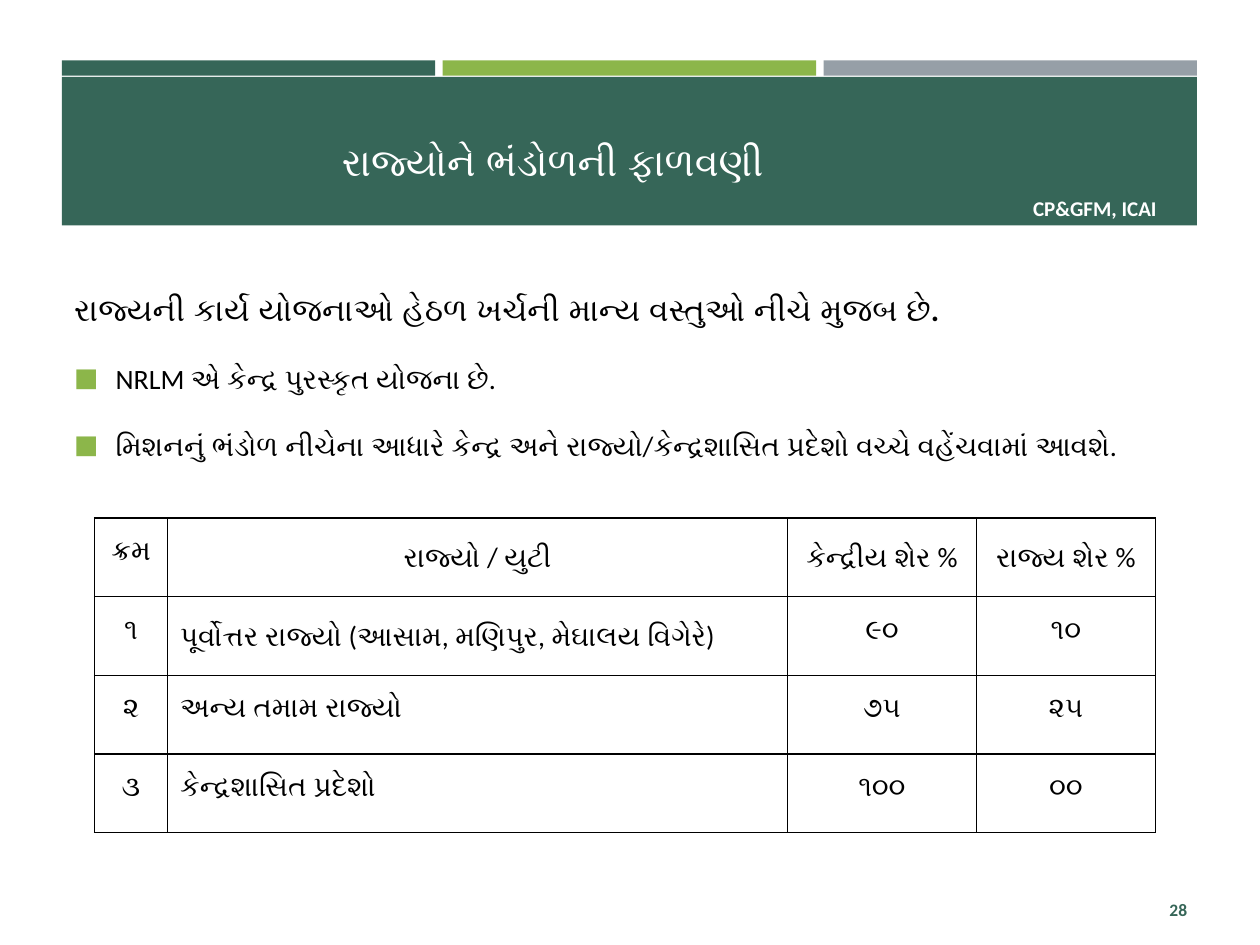
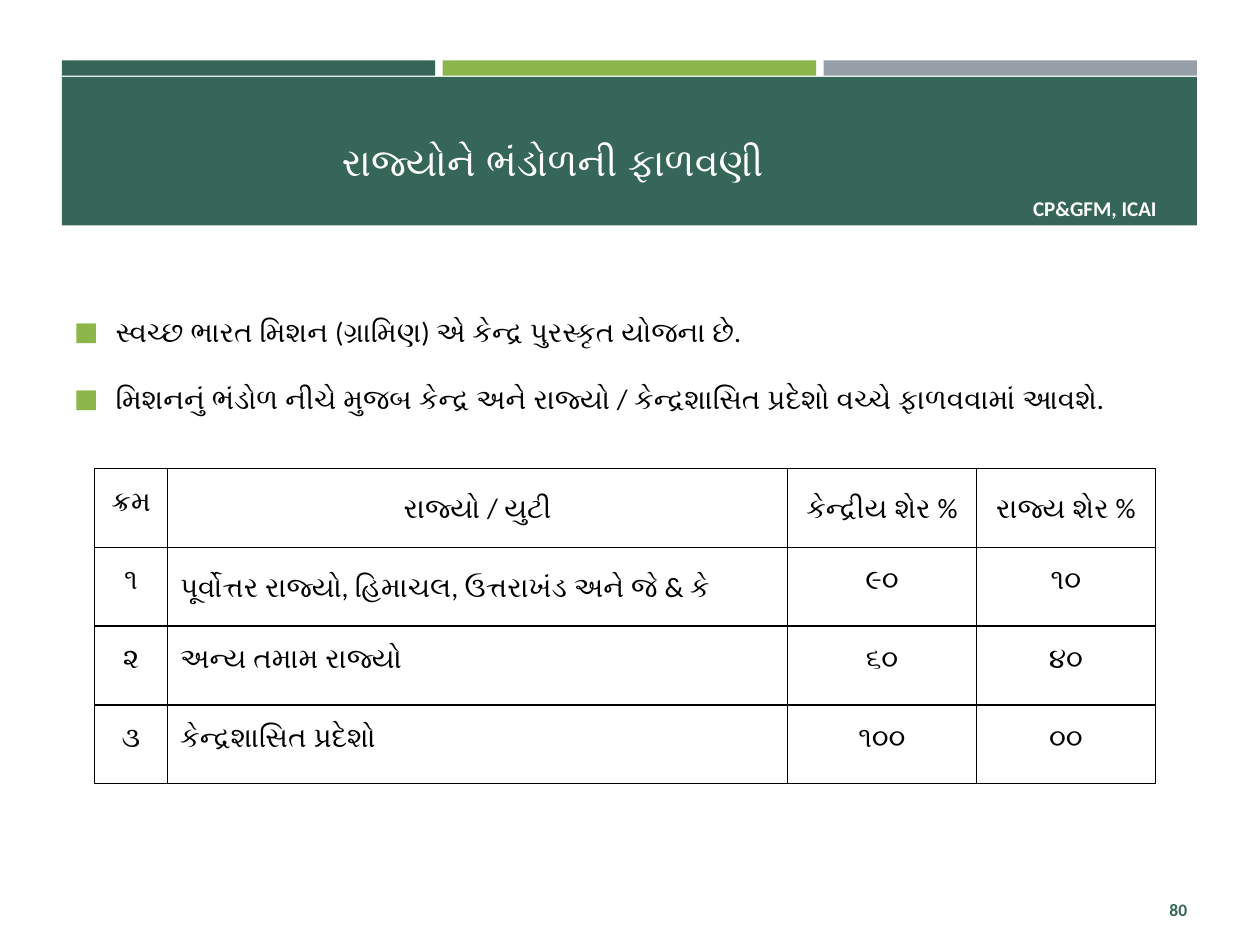
from dataclasses import dataclass

from lxml.etree import SubElement
from pptx import Presentation
from pptx.dml.color import RGBColor
from pptx.enum.shapes import MSO_SHAPE
from pptx.enum.text import MSO_ANCHOR, PP_ALIGN
from pptx.oxml.ns import qn
from pptx.util import Inches, Pt


@dataclass(frozen=True)
class Theme:
    font: str = "Calibri"
    green: str = "366658"
    lime: str = "8CB64A"
    gray: str = "969FA7"
    white: str = "FFFFFF"
    black: str = "000000"
    title_size: int = 22
    heading_size: int = 18
    body_size: int = 16
    badge_size: int = 12
    number_size: int = 10


theme = Theme()
presentation = Presentation()
presentation.slide_width = Inches(10)
presentation.slide_height = Inches(7.5)
column = presentation.slide_width / 100
row = presentation.slide_height / 75


def place(left, top, width, height):
    return round(left * column), round(top * row), round(width * column), round(height * row)


def add_text(frame, text, size=theme.body_size, color=theme.black, bold=False,
             align=PP_ALIGN.CENTER, spacing=1.0, margin=None, anchor=None, hanging=0, bullet=False):
    frame.word_wrap = True
    if anchor is not None:
        frame.vertical_anchor = anchor
    if margin is not None:
        frame.margin_left = frame.margin_right = round(margin * column)
        frame.margin_top = frame.margin_bottom = round(margin * row)
    paragraph = frame.paragraphs[0] if not frame.text else frame.add_paragraph()
    paragraph.alignment = align
    paragraph.line_spacing = spacing
    properties = paragraph._p.get_or_add_pPr()
    if hanging:
        properties.set("marL", str(round(hanging * column)))
        properties.set("indent", str(-round(hanging * column)))
    if bullet:
        bullet_color = SubElement(properties, qn("a:buClr"))
        SubElement(bullet_color, qn("a:srgbClr"), val=theme.lime)
        SubElement(properties, qn("a:buSzPct"), val="92000")
        SubElement(properties, qn("a:buFont"), typeface=theme.font)
        SubElement(properties, qn("a:buChar"), char="■")
    run = paragraph.add_run()
    run.text = text
    run.font.name = theme.font
    run.font.size = Pt(size)
    run.font.bold = bold
    run.font.color.rgb = RGBColor.from_string(color)


band_left, band_width, tab_gap = 4.9, 90.1, 0.6
tab_width = (band_width - 2 * tab_gap) / 3
bands = [(band_left + index * (tab_width + tab_gap), 4.8, tab_width, 1.2, color)
         for index, color in enumerate((theme.green, theme.lime, theme.gray))]
bands.append((band_left, 6.1, band_width, 11.8, theme.green))

table_columns = [5.8, 49.2, 15, 14.2]
table_row = 6.25
table_header = ["ક્રમ", "રાજ્યો / યુટી", "કેન્દ્રીય શેર %", "રાજ્ય શેર %"]

slides = [
    {
        "number": "28",
        "body_top": 19,
        "heading": "રાજ્યની કાર્ય યોજનાઓ હેઠળ ખર્ચની માન્ય વસ્તુઓ નીચે મુજબ છે.",
        "bullets": [
            "NRLM એ કેન્દ્ર પુરસ્કૃત યોજના છે.",
            "મિશનનું ભંડોળ નીચેના આધારે કેન્દ્ર અને રાજ્યો/કેન્દ્રશાસિત પ્રદેશો વચ્ચે વહેંચવામાં આવશે.",
        ],
        "table_top": 41.1,
        "shares": [
            ["૧", "પૂર્વોત્તર રાજ્યો (આસામ, મણિપુર, મેઘાલય વિગેરે)", "૯૦", "૧૦"],
            ["૨", "અન્ય તમામ રાજ્યો", "૭૫", "૨૫"],
            ["૩", "કેન્દ્રશાસિત પ્રદેશો", "૧૦૦", "૦૦"],
        ],
    },
    {
        "number": "80",
        "body_top": 21.3,
        "heading": None,
        "bullets": [
            "સ્વચ્છ ભારત મિશન (ગ્રામિણ) એ કેન્દ્ર પુરસ્કૃત યોજના છે.",
            "મિશનનું ભંડોળ નીચે મુજબ કેન્દ્ર અને રાજ્યો / કેન્દ્રશાસિત પ્રદેશો વચ્ચે ફાળવવામાં આવશે.",
        ],
        "table_top": 37.2,
        "shares": [
            ["૧", "પૂર્વોત્તર રાજ્યો, હિમાચલ, ઉત્તરાખંડ અને જે & કે", "૯૦", "૧૦"],
            ["૨", "અન્ય તમામ રાજ્યો", "૬૦", "૪૦"],
            ["૩", "કેન્દ્રશાસિત પ્રદેશો", "૧૦૦", "૦૦"],
        ],
    },
]

for content in slides:
    slide = presentation.slides.add_slide(presentation.slide_layouts[6])

    for left, top, width, height, color in bands + [(79.9, 15.6, 14, 1.8, theme.green)]:
        shape = slide.shapes.add_shape(MSO_SHAPE.RECTANGLE, *place(left, top, width, height))
        shape.shadow.inherit = False
        shape.fill.solid()
        shape.fill.fore_color.rgb = RGBColor.from_string(color)
        shape.line.fill.background()
    add_text(shape.text_frame, "CP&GFM, ICAI", size=theme.badge_size, color=theme.white,
             bold=True, margin=0, anchor=MSO_ANCHOR.MIDDLE)

    title = slide.shapes.add_textbox(*place(band_left, 6.2, 77.9, 11.4))
    add_text(title.text_frame, "રાજ્યોને ભંડોળની ફાળવણી", size=theme.title_size,
             color=theme.white, bold=True, spacing=1.5, anchor=MSO_ANCHOR.MIDDLE)

    number = slide.shapes.add_textbox(*place(86.8, 70.2, 8.4, 4))
    add_text(number.text_frame, content["number"], size=theme.number_size, color=theme.green,
             bold=True, align=PP_ALIGN.RIGHT, anchor=MSO_ANCHOR.MIDDLE)

    body = slide.shapes.add_textbox(*place(band_left, content["body_top"], band_width, 46.2))
    body_format = {"align": PP_ALIGN.JUSTIFY, "spacing": 2.0, "margin": 1, "hanging": 3.3}
    if content["heading"]:
        add_text(body.text_frame, content["heading"], size=theme.heading_size, bold=True, **body_format)
    for bullet_text in content["bullets"]:
        add_text(body.text_frame, bullet_text, bullet=True, **body_format)

    table_rows = [table_header] + content["shares"]
    table = slide.shapes.add_table(
        len(table_rows), len(table_columns),
        *place(7.5, content["table_top"], sum(table_columns), table_row * len(table_rows))).table
    for index, width in enumerate(table_columns):
        table.columns[index].width = round(width * column)
    for row_index, texts in enumerate(table_rows):
        for column_index, text in enumerate(texts):
            cell = table.cell(row_index, column_index)
            is_region = row_index > 0 and column_index == 1
            add_text(cell.text_frame, text, spacing=1.5,
                     align=PP_ALIGN.JUSTIFY if is_region else PP_ALIGN.CENTER)
            cell_properties = cell._tc.get_or_add_tcPr()
            for side in ("lnL", "lnR", "lnT", "lnB"):
                border = SubElement(cell_properties, qn(f"a:{side}"), w=str(Pt(1)))
                border_fill = SubElement(border, qn("a:solidFill"))
                SubElement(border_fill, qn("a:srgbClr"), val=theme.black)
            cell.fill.background()

presentation.save("out.pptx")
